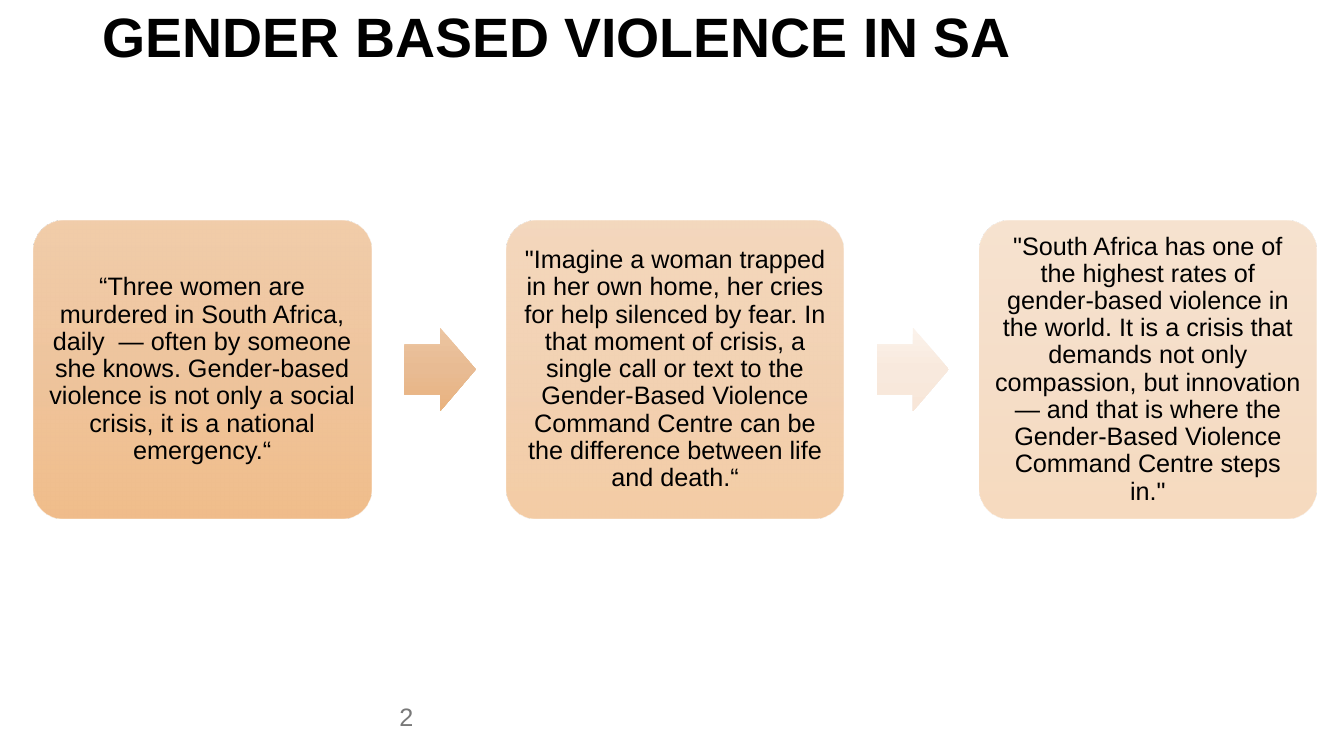
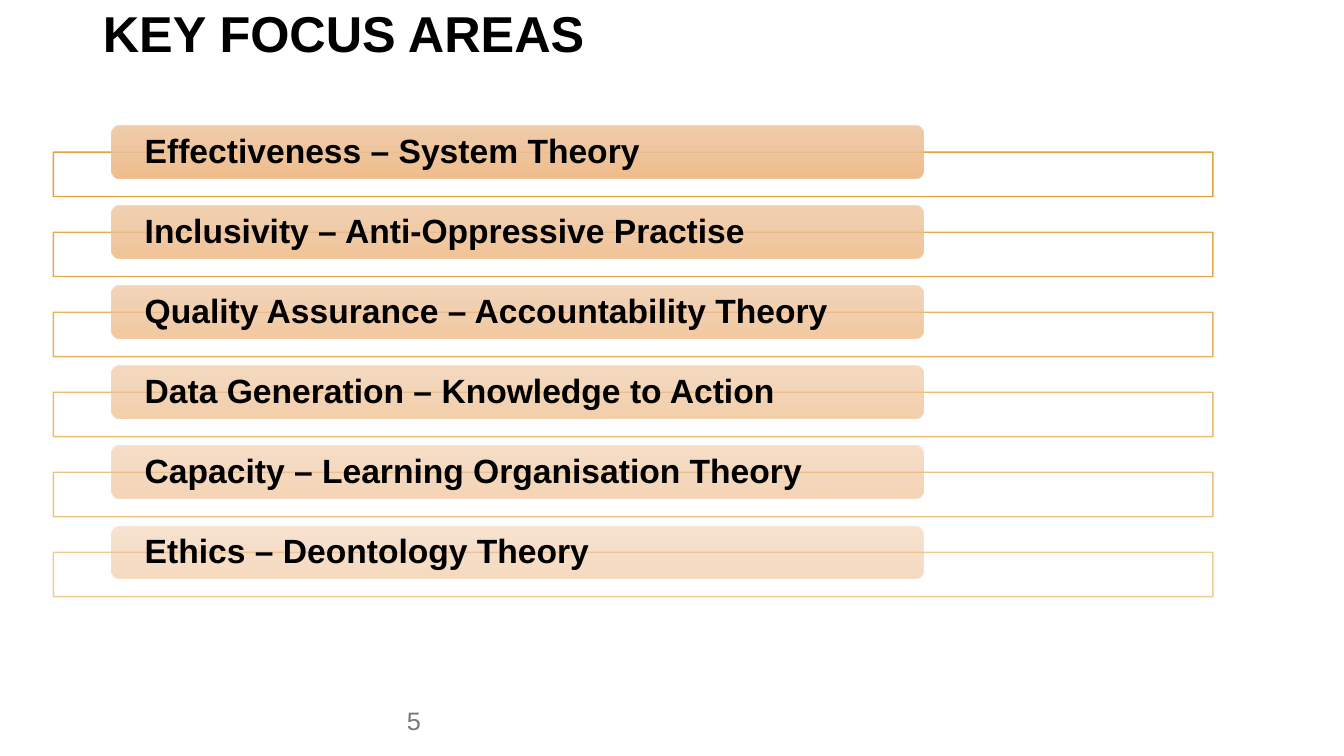
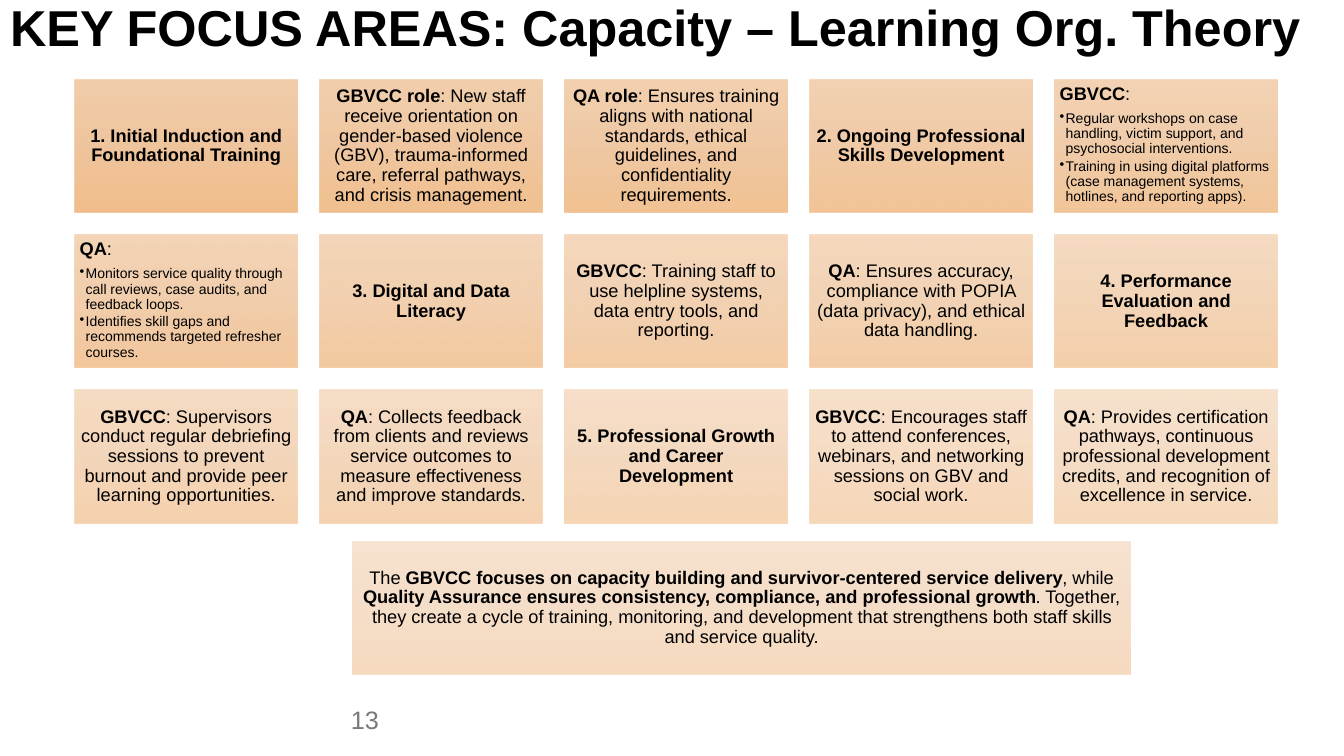
from dataclasses import dataclass

from lxml import etree
from pptx import Presentation
from pptx.dml.color import RGBColor
from pptx.enum.shapes import MSO_SHAPE
from pptx.enum.text import MSO_ANCHOR, MSO_AUTO_SIZE, PP_ALIGN
from pptx.oxml.ns import qn
from pptx.util import Inches, Pt

LEFT, CENTER = PP_ALIGN.LEFT, PP_ALIGN.CENTER
TOP, MIDDLE = MSO_ANCHOR.TOP, MSO_ANCHOR.MIDDLE
NO_AUTOFIT = MSO_AUTO_SIZE.NONE
RECTANGLE = MSO_SHAPE.RECTANGLE
ROUNDED = MSO_SHAPE.ROUNDED_RECTANGLE
ARROW = MSO_SHAPE.RIGHT_ARROW


@dataclass(frozen=True)
class Theme:
    font: str = "Arial"
    ink: str = "000000"
    page_ink: str = "797979"
    white: str = "FFFFFF"
    outline: str = "E19825"
    card: tuple = ("F0C8A2", "EDBF94", "EFB77F")
    arrows: tuple = (("ECC5A1", "E8BB93", "E9B27E"), ("FBF2EB", "F8E9DD", "F8E6D8"))
    most_opaque: int = 90
    opacity_range: int = 40
    large_title: float = 39.6
    title: int = 36
    area: int = 24
    quote: int = 18
    page: int = 18
    card_text: int = 13
    bullet: int = 10


THEME = Theme()


def set_text(paragraph, runs, size, align, color=THEME.ink):
    paragraph.alignment = align
    paragraph.line_spacing = 0.9
    for text, bold in runs:
        run = paragraph.add_run()
        run.text = text
        run.font.name = THEME.font
        run.font.size = Pt(size)
        run.font.bold = bold
        run.font.color.rgb = RGBColor.from_string(color)


def paint_gradient(shape, colors, opacity=100):
    shape.shadow.inherit = False
    shape.line.fill.background()
    shape.fill.gradient()
    shape.fill.gradient_angle = 270
    stops = shape._element.spPr.find(".//" + qn("a:gsLst"))
    for stop in list(stops):
        stops.remove(stop)
    for position, color in zip((0, 50000, 100000), colors):
        stop = etree.SubElement(stops, qn("a:gs"), pos=str(position))
        rgb = etree.SubElement(stop, qn("a:srgbClr"), val=color)
        etree.SubElement(rgb, qn("a:alpha"), val=str(round(opacity * 1000)))


prs = Presentation()
prs.slide_width, prs.slide_height = Inches(13.33), Inches(7.5)
title_only = prs.slide_layouts[5]

headings = [
    ("GENDER BASED VIOLENCE IN SA", THEME.large_title, (0.92, 0.04, 11.5, 0.71),
     "2", (3.64, 6.95, 0.78, 0.36)),
    ("KEY FOCUS AREAS", THEME.title, (0.92, 0.09, 11.5, 0.54),
     "5", (3.8, 6.98, 0.61, 0.37)),
    ("KEY FOCUS AREAS: Capacity – Learning Org. Theory", THEME.title, (0, 0, 13.15, 0.59),
     "13", (3.26, 6.96, 0.72, 0.4)),
]
slides = []
for heading, size, heading_box, page, page_box in headings:
    slide = prs.slides.add_slide(title_only)
    slides.append(slide)
    title = slide.shapes.title
    title.left, title.top, title.width, title.height = map(Inches, heading_box)
    title.text_frame.auto_size = NO_AUTOFIT
    title.text_frame.vertical_anchor = MIDDLE
    set_text(title.text_frame.paragraphs[0], [(heading, True)], size, LEFT)

    page_number = slide.shapes.add_textbox(*map(Inches, page_box))
    page_number.text_frame.word_wrap = True
    page_number.text_frame.vertical_anchor = MIDDLE
    set_text(page_number.text_frame.paragraphs[0], [(page, False)], THEME.page, CENTER, THEME.page_ink)

violence, focus_areas, capacity = slides

quotes = [
    "“Three women are murdered in South Africa, daily  — often by someone she knows. "
    "Gender-based violence is not only a social crisis, it is a national emergency.“",
    "\"Imagine a woman trapped in her own home, her cries for help silenced by fear. "
    "In that moment of crisis, a single call or text to the Gender-Based Violence "
    "Command Centre can be the difference between life and death.“",
    "\"South Africa has one of the highest rates of gender-based violence in the world. "
    "It is a crisis that demands not only compassion, but innovation — and that is where "
    "the Gender-Based Violence Command Centre steps in.\"",
]
QUOTE_LEFT, QUOTE_TOP, QUOTE_STEP = 0.33, 2.19, 4.69
QUOTE_WIDTH, QUOTE_HEIGHT = 3.35, 2.95
ARROW_WIDTH, ARROW_HEIGHT, ARROW_GAP = 0.71, 0.83, 0.33
for index, quote in enumerate(quotes):
    left = QUOTE_LEFT + index * QUOTE_STEP
    quote_card = violence.shapes.add_shape(
        ROUNDED, Inches(left), Inches(QUOTE_TOP), Inches(QUOTE_WIDTH), Inches(QUOTE_HEIGHT))
    quote_card.adjustments[0] = 0.1
    opacity = THEME.most_opaque - THEME.opacity_range * index / (len(quotes) - 1)
    paint_gradient(quote_card, THEME.card, opacity)
    frame = quote_card.text_frame
    frame.margin_left = frame.margin_right = frame.margin_top = frame.margin_bottom = Inches(0.07)
    set_text(frame.paragraphs[0], [(quote, False)], THEME.quote, CENTER)

for index, colors in enumerate(THEME.arrows):
    next_step = violence.shapes.add_shape(
        ARROW,
        Inches(QUOTE_LEFT + QUOTE_WIDTH + ARROW_GAP + index * QUOTE_STEP),
        Inches(QUOTE_TOP + (QUOTE_HEIGHT - ARROW_HEIGHT) / 2),
        Inches(ARROW_WIDTH), Inches(ARROW_HEIGHT))
    next_step.adjustments[0] = 0.6
    next_step.adjustments[1] = 0.5
    paint_gradient(next_step, colors)

areas = [
    "Effectiveness – System Theory",
    "Inclusivity – Anti-Oppressive Practise",
    "Quality Assurance – Accountability Theory",
    "Data Generation – Knowledge to Action",
    "Capacity – Learning Organisation Theory",
    "Ethics – Deontology Theory",
]
FIRST_AREA, LAST_AREA, AREA_HEIGHT = 1.25, 5.22, 0.52
area_step = (LAST_AREA - FIRST_AREA) / (len(areas) - 1)
for index, area in enumerate(areas):
    top = FIRST_AREA + index * area_step
    opacity = THEME.most_opaque - THEME.opacity_range * index / (len(areas) - 1)
    area_outline = focus_areas.shapes.add_shape(
        RECTANGLE, Inches(0.53), Inches(top + AREA_HEIGHT / 2), Inches(11.5), Inches(0.44))
    area_outline.shadow.inherit = False
    area_outline.fill.solid()
    area_outline.fill.fore_color.rgb = RGBColor.from_string(THEME.white)
    area_outline.line.color.rgb = RGBColor.from_string(THEME.outline)
    area_outline.line.width = Pt(1)
    line_color = area_outline.line._ln.find(".//" + qn("a:srgbClr"))
    etree.SubElement(line_color, qn("a:alpha"), val=str(round(opacity * 1000)))

    area_bar = focus_areas.shapes.add_shape(
        ROUNDED, Inches(1.11), Inches(top), Inches(8.05), Inches(AREA_HEIGHT))
    paint_gradient(area_bar, THEME.card, opacity)
    frame = area_bar.text_frame
    frame.margin_left = frame.margin_right = Inches(0.3)
    frame.margin_top = frame.margin_bottom = 0
    set_text(frame.paragraphs[0], [(area, True)], THEME.area, LEFT)

topics = [
    ([("1. Initial Induction and Foundational Training", True)], []),
    ([("GBVCC role", True),
      (": New staff receive orientation on gender-based violence (GBV), trauma-informed care, "
       "referral pathways, and crisis management.", False)], []),
    ([("QA role", True),
      (": Ensures training aligns with national standards, ethical guidelines, and "
       "confidentiality requirements.", False)], []),
    ([("2. Ongoing Professional Skills Development", True)], []),
    ([("GBVCC", True), (":", False)],
     ["Regular workshops on case handling, victim support, and psychosocial interventions.",
      "Training in using digital platforms (case management systems, hotlines, and reporting apps)."]),
    ([("QA", True), (":", False)],
     ["Monitors service quality through call reviews, case audits, and feedback loops.",
      "Identifies skill gaps and recommends targeted refresher courses."]),
    ([("3. Digital and Data Literacy", True)], []),
    ([("GBVCC", True),
      (": Training staff to use helpline systems, data entry tools, and reporting.", False)], []),
    ([("QA", True),
      (": Ensures accuracy, compliance with POPIA (data privacy), and ethical data handling.", False)], []),
    ([("4. Performance Evaluation and Feedback", True)], []),
    ([("GBVCC", True),
      (": Supervisors conduct regular debriefing sessions to prevent burnout and provide peer "
       "learning opportunities.", False)], []),
    ([("QA", True),
      (": Collects feedback from clients and reviews service outcomes to measure effectiveness "
       "and improve standards.", False)], []),
    ([("5. Professional Growth and Career Development", True)], []),
    ([("GBVCC", True),
      (": Encourages staff to attend conferences, webinars, and networking sessions on GBV and "
       "social work.", False)], []),
    ([("QA", True),
      (": Provides certification pathways, continuous professional development credits, and "
       "recognition of excellence in service.", False)], []),
    ([("The ", False),
      ("GBVCC focuses on capacity building and survivor-centered service delivery", True),
      (", while ", False),
      ("Quality Assurance ensures consistency, compliance, and professional growth", True),
      (". Together, they create a cycle of training, monitoring, and development that strengthens "
       "both staff skills and service quality.", False)], []),
]
COLUMNS = 5
TOPIC_WIDTH, TOPIC_HEIGHT, TOPIC_GAP = 2.21, 1.32, 0.22
SUMMARY_BOX = (3.5, 5.37, 7.71, TOPIC_HEIGHT)
topic_boxes = [
    (0.74 + index % COLUMNS * (TOPIC_WIDTH + TOPIC_GAP),
     0.79 + index // COLUMNS * (TOPIC_HEIGHT + TOPIC_GAP),
     TOPIC_WIDTH, TOPIC_HEIGHT)
    for index in range(len(topics) - 1)
] + [SUMMARY_BOX]
for index, ((lead, bullets), topic_box) in enumerate(zip(topics, topic_boxes)):
    topic_card = capacity.shapes.add_shape(RECTANGLE, *map(Inches, topic_box))
    opacity = THEME.most_opaque - THEME.opacity_range * index / (len(topics) - 1)
    paint_gradient(topic_card, THEME.card, opacity)
    frame = topic_card.text_frame
    frame.margin_left = frame.margin_right = frame.margin_top = frame.margin_bottom = Inches(0.05)
    frame.vertical_anchor = TOP if bullets else MIDDLE
    set_text(frame.paragraphs[0], lead, THEME.card_text, LEFT if bullets else CENTER)
    if bullets:
        frame.paragraphs[0].space_after = Pt(5.2)
    for bullet in bullets:
        paragraph = frame.add_paragraph()
        paragraph.level = 1
        set_text(paragraph, [(bullet, False)], THEME.bullet, LEFT)
        paragraph.space_after = Pt(1.7)
        properties = paragraph._p.get_or_add_pPr()
        properties.set("marL", str(Inches(0.06)))
        properties.set("indent", str(Inches(-0.06)))
        etree.SubElement(properties, qn("a:buChar"), char="•")

prs.save("out.pptx")
